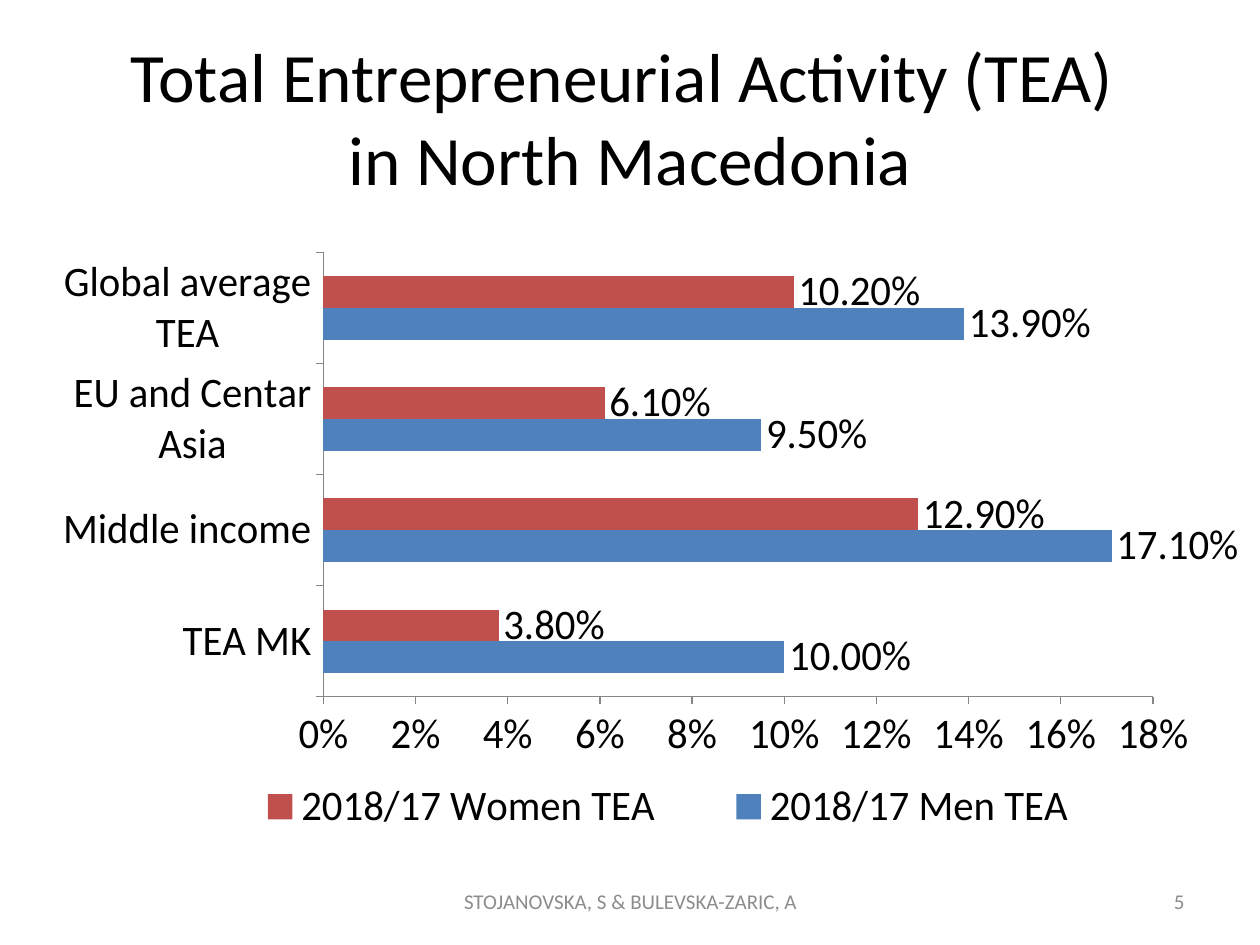
from lxml import etree
from pptx import Presentation
from pptx.chart.data import CategoryChartData
from pptx.dml.color import RGBColor
from pptx.enum.chart import XL_CHART_TYPE, XL_LABEL_POSITION, XL_LEGEND_POSITION, XL_TICK_MARK
from pptx.enum.text import MSO_ANCHOR, PP_ALIGN
from pptx.oxml.ns import qn
from pptx.util import Inches, Pt

CENTER, RIGHT = PP_ALIGN.CENTER, PP_ALIGN.RIGHT
BLACK = RGBColor(0x00, 0x00, 0x00)
GRAY = RGBColor(0x8C, 0x8C, 0x8C)
AXIS_GRAY = RGBColor(0x86, 0x86, 0x86)
BLUE = RGBColor(0x4F, 0x81, 0xBD)
RED = RGBColor(0xC0, 0x50, 0x4D)
FONT = "Calibri"

# text, (left, top, width, height), alignment, size, colour
TEXTS = [
    ("Total Entrepreneurial Activity (TEA) \vin North Macedonia",
     (0.5, 0.3, 9, 1.25), CENTER, 39.6, BLACK),
    ("STOJANOVSKA, S & BULEVSKA-ZARIC, A", (3.42, 6.95, 3.17, 0.4), CENTER, 12, GRAY),
    ("5", (7.17, 6.95, 2.33, 0.4), RIGHT, 12, GRAY),
]
CATEGORIES = ["TEA MK", "Middle income", "EU and Centar Asia", "Global average TEA"]
SERIES = [
    ("2018/17 Men TEA", (0.1, 0.171, 0.095, 0.139), BLUE),
    ("2018/17 Women TEA", (0.038, 0.129, 0.061, 0.102), RED),
]
CHART_BOX = (0.5, 1.75, 9.33, 4.95)
# Fractions of the chart area: x, y, width, height
PLOT_LAYOUT = (0.228, 0.051, 0.727, 0.713)
LEGEND_LAYOUT = (0.12, 0.88, 0.82, 0.12)


def set_format(font, size, color):
    for name, value in {"name": FONT, "size": Pt(size), "bold": False}.items():
        setattr(font, name, value)
    font.color.rgb = color


def add_text(s, text, box, align, size, color):
    tf = s.shapes.add_textbox(*map(Inches, box)).text_frame
    tf.word_wrap = True
    tf.vertical_anchor = MSO_ANCHOR.MIDDLE
    p = tf.paragraphs[0]
    p.text = text
    p.alignment = align
    for r in p.runs:
        set_format(r.font, size, color)


def set_layout(parent, before, fractions, inner=False):
    """Place a chart part by hand; the layout goes just ahead of the tag `before`."""
    for old in parent.findall(qn("c:layout")):
        parent.remove(old)
    layout = etree.Element(qn("c:layout"))
    manual = etree.SubElement(layout, qn("c:manualLayout"))
    values = [("layoutTarget", "inner")] if inner else []
    values += [("xMode", "edge"), ("yMode", "edge"), *zip("xywh", fractions)]
    for tag, value in values:
        etree.SubElement(manual, qn(f"c:{tag}")).set("val", str(value))
    parent.find(qn(before)).addprevious(layout)


def add_tea_chart(s):
    data = CategoryChartData(number_format="0.00%")
    data.categories = CATEGORIES
    for name, values, _ in SERIES:
        data.add_series(name, values)
    chart = s.shapes.add_chart(
        XL_CHART_TYPE.BAR_CLUSTERED, *map(Inches, CHART_BOX), data).chart
    chart.has_title = False
    set_format(chart.font, 24, BLACK)

    plot = chart.plots[0]
    plot.gap_width = 150
    plot.vary_by_categories = False
    for series, (_, _, color) in zip(plot.series, SERIES):
        series.format.fill.solid()
        series.format.fill.fore_color.rgb = color
        labels = series.data_labels
        for name, value in {"show_value": True, "number_format": "0.00%",
                            "number_format_is_linked": False,
                            "position": XL_LABEL_POSITION.OUTSIDE_END}.items():
            setattr(labels, name, value)

    for axis in (chart.category_axis, chart.value_axis):
        axis.has_major_gridlines = False
        axis.major_tick_mark = XL_TICK_MARK.OUTSIDE
        axis.format.line.color.rgb = AXIS_GRAY
    axis = chart.value_axis
    axis.minimum_scale, axis.maximum_scale, axis.major_unit = 0, 0.18, 0.02
    axis.tick_labels.number_format = "0%"
    axis.tick_labels.number_format_is_linked = False

    chart.has_legend = True
    chart.legend.position = XL_LEGEND_POSITION.RIGHT
    chart.legend.include_in_layout = False
    plot_area = chart.element.find(f".//{qn('c:plotArea')}")
    legend = chart.element.find(f".//{qn('c:legend')}")
    set_layout(plot_area, "c:barChart", PLOT_LAYOUT, inner=True)
    set_layout(legend, "c:overlay", LEGEND_LAYOUT)


def main():
    prs = Presentation()
    prs.slide_width, prs.slide_height = Inches(10), Inches(7.5)
    s = prs.slides.add_slide(prs.slide_layouts[6])
    for item in TEXTS:
        add_text(s, *item)
    add_tea_chart(s)
    prs.save("out.pptx")


if __name__ == "__main__":
    main()
